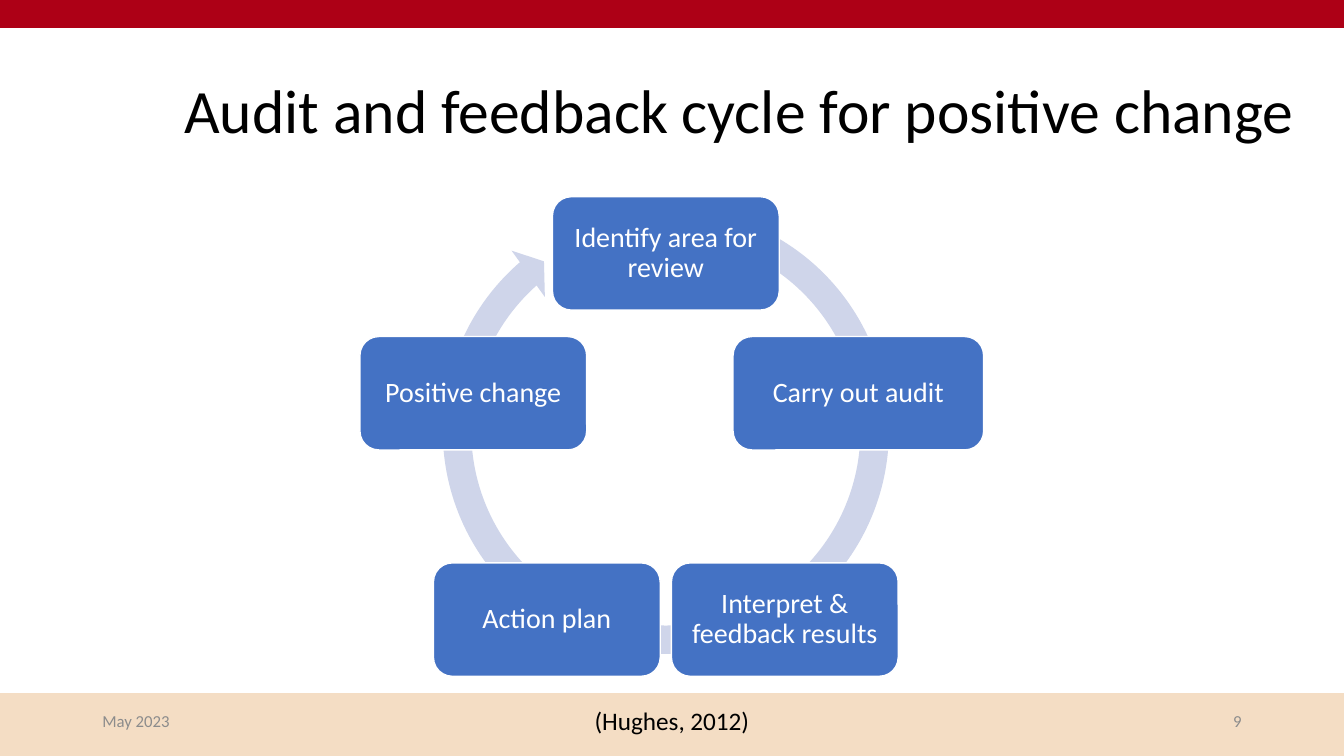
import math

import pptx
import pptx.dml.color
import pptx.enum.shapes
import pptx.enum.text
import pptx.util

Pt = pptx.util.Pt
SHAPE = pptx.enum.shapes.MSO_SHAPE
ALIGN = pptx.enum.text.PP_ALIGN
MIDDLE = pptx.enum.text.MSO_ANCHOR.MIDDLE

COLORS = {
    "red": "AD0016",
    "sand": "F4DDC4",
    "blue": "4472C4",
    "ring": "CFD5EA",
    "white": "FFFFFF",
    "black": "000000",
    "grey": "8C8C8C",
}


class SlideBuilder:
    font = "Calibri"

    def __init__(self, slide):
        self.slide = slide

    def rgb(self, name):
        return pptx.dml.color.RGBColor.from_string(COLORS[name])

    def add_text(self, tf, text, size, color, align, spacing=1.0):
        tf.word_wrap = True
        tf.auto_size = pptx.enum.text.MSO_AUTO_SIZE.NONE
        tf.vertical_anchor = MIDDLE
        p = tf.paragraphs[0]
        p.alignment = align
        p.line_spacing = spacing
        r = p.add_run()
        r.text = text
        r.font.name = self.font
        r.font.size = Pt(size)
        r.font.color.rgb = self.rgb(color)

    def title(self, text, x, y, w, h):
        sp = self.slide.shapes.title
        sp.left, sp.top, sp.width, sp.height = Pt(x), Pt(y), Pt(w), Pt(h)
        self.add_text(sp.text_frame, text, 44, "black", ALIGN.LEFT, 0.9)

    def shape(self, kind, x, y, w, h, fill, line=None):
        sp = self.slide.shapes.add_shape(kind, Pt(x), Pt(y), Pt(w), Pt(h))
        sp.shadow.inherit = False
        sp.fill.solid()
        sp.fill.fore_color.rgb = self.rgb(fill)
        if line:
            sp.line.color.rgb = self.rgb(line)
            sp.line.width = Pt(1)
        else:
            sp.line.fill.background()
        return sp

    def step(self, text, cx, cy, w, h):
        sp = self.shape(SHAPE.ROUNDED_RECTANGLE, cx - w / 2, cy - h / 2, w, h, "blue", "white")
        tf = sp.text_frame
        tf.margin_left = tf.margin_right = tf.margin_top = tf.margin_bottom = Pt(6)
        self.add_text(tf, text, 20, "white", ALIGN.CENTER, 0.9)

    def ring(self, cx, cy, size, adjustments):
        sp = self.shape(SHAPE.CIRCULAR_ARROW, cx - size / 2, cy - size / 2, size, size, "ring")
        for i, value in enumerate(adjustments):
            sp.adjustments[i] = value

    def footer(self, text, x, w, size, color, align):
        sp = self.slide.shapes.add_textbox(Pt(x), Pt(500.5), Pt(w), Pt(28.8))
        self.add_text(sp.text_frame, text, size, color, align)


def main():
    prs = pptx.Presentation()
    prs.slide_width, prs.slide_height = Pt(960), Pt(540)
    s = SlideBuilder(prs.slides.add_slide(prs.slide_layouts[5]))

    # Bands and title
    s.shape(SHAPE.RECTANGLE, 0, 495.5, 960, 44.5, "sand", "sand")
    s.shape(SHAPE.RECTANGLE, 0, -0.5, 960, 20, "red", "red")
    s.title("Audit and feedback cycle for positive change", 124.5, 28.8, 810, 104.4)

    # Footer
    s.footer("May 2023", 66, 216, 12, "grey", ALIGN.LEFT)
    s.footer("(Hughes, 2012)", 318, 324, 18, "black", ALIGN.CENTER)
    s.footer("9", 678, 216, 12, "grey", ALIGN.RIGHT)

    # Cycle: steps sit clockwise on a regular pentagon, starting at the top
    cx, cy, radius = 475.6, 325.6, 144.6
    s.ring(cx, 307.8, 339, (0.06, 3.31, 137.27, 174.16, 0.06))
    steps = [
        ("Identify area for review", 162),
        ("Carry out audit", 179),
        ("Interpret & feedback results", 162),
        ("Action plan", 162),
        ("Positive change", 162),
    ]
    for i, (text, width) in enumerate(steps):
        angle = 2 * math.pi * i / len(steps)
        s.step(text, cx + radius * math.sin(angle), cy - radius * math.cos(angle), width, 81)

    prs.save("out.pptx")


if __name__ == "__main__":
    main()
